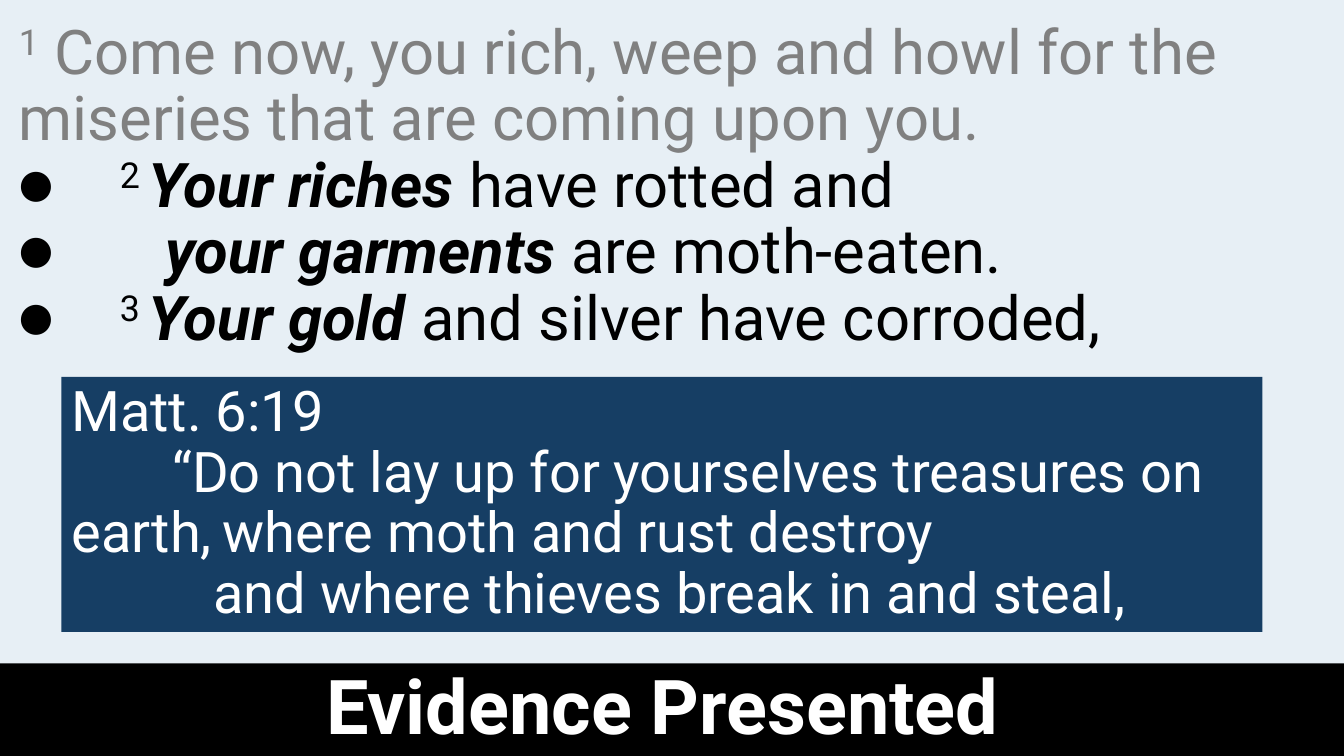
"""Build the "Evidence Presented" scripture slide."""
from dataclasses import dataclass

from lxml.etree import SubElement
from pptx import Presentation
from pptx.dml.color import RGBColor
from pptx.enum.shapes import MSO_SHAPE as Shape
from pptx.enum.text import MSO_ANCHOR as Anchor, MSO_AUTO_SIZE as AutoSize, PP_ALIGN as Align
from pptx.oxml.ns import qn
from pptx.util import Inches, Pt


@dataclass(frozen=True)
class Theme:
    """Colours, type sizes and font of the slide."""
    font: str = "Roboto"
    background: str = "E7EFF5"
    panel: str = "163E64"
    black: str = "000000"
    white: str = "FFFFFF"
    muted: str = "808080"
    verse: int = 44
    quote: int = 40
    title: int = 54
    line_spacing: float = 0.9


THEME = Theme()


def rgb(code):
    """Turn a hex code into a colour."""
    return RGBColor.from_string(code)


def add_run(paragraph, text, size, color, bold=False, italic=False, raised=False):
    """Add one styled run to a paragraph."""
    run = paragraph.add_run()
    run.text = text
    font = run.font
    font.name, font.size = THEME.font, Pt(size)
    font.bold, font.italic = bold, italic
    font.color.rgb = rgb(color)
    if raised:
        run._r.get_or_add_rPr().set("baseline", "30000")


def next_paragraph(frame, align=Align.LEFT, margin=0, indent=0):
    """Return the next free paragraph with its spacing and indents set."""
    first = frame.paragraphs[0]
    paragraph = frame.add_paragraph() if first.runs else first
    paragraph.alignment = align
    paragraph.line_spacing = THEME.line_spacing
    properties = paragraph._p.get_or_add_pPr()
    properties.set("marL", str(Inches(margin)))
    properties.set("indent", str(Inches(indent)))
    return paragraph


def add_bullet(paragraph):
    """Give a paragraph a round bullet."""
    properties = paragraph._p.get_or_add_pPr()
    SubElement(properties, qn("a:buSzPct"), val="64000")
    SubElement(properties, qn("a:buFont"), typeface=THEME.font)
    SubElement(properties, qn("a:buChar"), char="●")


def add_tab_stop(paragraph, position):
    """Add one left tab stop to a paragraph."""
    stops = SubElement(paragraph._p.get_or_add_pPr(), qn("a:tabLst"))
    SubElement(stops, qn("a:tab"), pos=str(Inches(position)), algn="l")


def prepare_frame(shape, anchor):
    """Set wrapping, fitting and anchoring of a shape's text."""
    frame = shape.text_frame
    frame.word_wrap = True
    frame.auto_size = AutoSize.SHAPE_TO_FIT_TEXT
    frame.vertical_anchor = anchor
    return frame


def add_panel(slide, box, color, anchor):
    """Add a plain filled rectangle and return its text frame."""
    panel = slide.shapes.add_shape(Shape.RECTANGLE, *map(Inches, box))
    panel.shadow.inherit = False
    panel.fill.solid()
    panel.fill.fore_color.rgb = rgb(color)
    panel.line.fill.background()
    return prepare_frame(panel, anchor)


def add_passage(slide):
    """Add the opening verse and the bulleted evidence."""
    box = slide.shapes.add_textbox(*map(Inches, (0.09, 0.16, 12.96, 3.44)))
    frame = prepare_frame(box, Anchor.TOP)
    opening = next_paragraph(frame)
    add_run(opening, "1", THEME.verse, THEME.muted, raised=True)
    add_run(opening, " Come now, you rich, weep and howl for the miseries that are coming upon you.",
            THEME.verse, THEME.muted)
    evidence = (
        (1, "2 ", "Your riches ", "have rotted and"),
        (1.45, "", "your garments ", "are moth-eaten."),
        (1, "3 ", "Your gold ", "and silver have corroded,"),
    )
    for margin, number, possession, fate in evidence:
        point = next_paragraph(frame, margin=margin, indent=-margin)
        add_bullet(point)
        if number:
            add_run(point, number, THEME.verse, THEME.black, raised=True)
        add_run(point, possession, THEME.verse, THEME.black, bold=True, italic=True)
        add_run(point, fate, THEME.verse, THEME.black)


def add_quotation(slide):
    """Add the panel with the cross-reference."""
    frame = add_panel(slide, (0.61, 3.74, 11.91, 2.53), THEME.panel, Anchor.MIDDLE)
    lines = (
        (0, "Matt. 6:19"),
        (1, "“Do not lay up for yourselves treasures on earth,\twhere moth and rust destroy"),
        (1.41, "and where thieves break in and steal,"),
    )
    for indent, text in lines:
        line = next_paragraph(frame, indent=indent)
        if "\t" in text:
            add_tab_stop(line, 2.42)
        add_run(line, text, THEME.quote, THEME.white)


def add_title_bar(slide):
    """Add the title bar along the bottom edge."""
    frame = add_panel(slide, (0, 6.58, 13.33, 0.92), THEME.black, Anchor.MIDDLE)
    add_run(next_paragraph(frame, Align.CENTER), "Evidence Presented ",
            THEME.title, THEME.white, bold=True)


def main():
    """Build and save the slide."""
    deck = Presentation()
    deck.slide_width, deck.slide_height = Inches(13.33), Inches(7.5)
    slide = deck.slides.add_slide(deck.slide_layouts[6])
    slide.background.fill.solid()
    slide.background.fill.fore_color.rgb = rgb(THEME.background)
    add_passage(slide)
    add_quotation(slide)
    add_title_bar(slide)
    deck.save("out.pptx")


if __name__ == "__main__":
    main()
